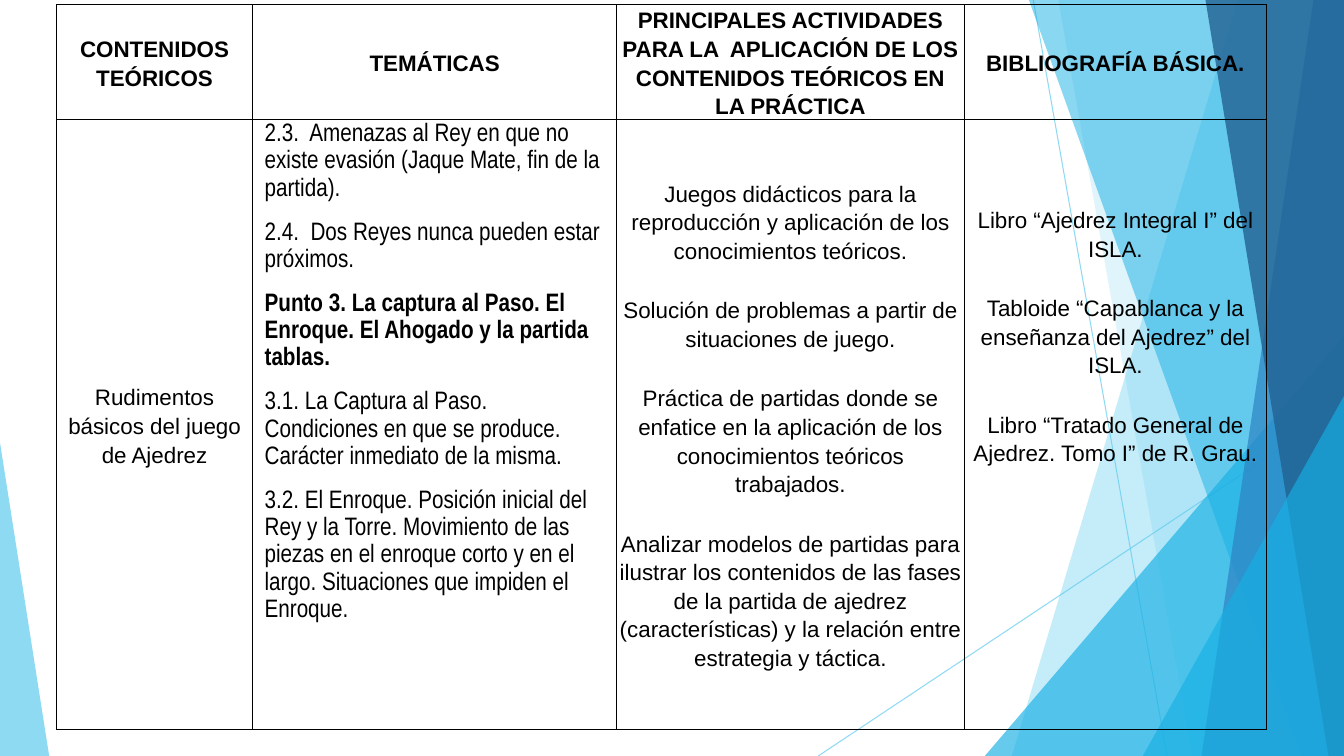
from lxml.etree import SubElement
from pptx import Presentation
from pptx.dml.color import RGBColor
from pptx.enum.shapes import MSO_CONNECTOR, MSO_SHAPE
from pptx.enum.text import MSO_ANCHOR, PP_ALIGN
from pptx.oxml import parse_xml
from pptx.oxml.ns import nsdecls, qn
from pptx.util import Cm, Pt


def paint(fill, color, opacity=100):
    fill.solid()
    fill.fore_color.rgb = RGBColor.from_string(color)
    if opacity < 100:
        srgb = next(fill._xPr.iter(qn("a:srgbClr")))
        SubElement(srgb, qn("a:alpha")).set("val", str(opacity * 1000))


def write(paragraph, text, font="Arial", size=16, bold=False,
          align=PP_ALIGN.CENTER, before=12, after=10, indent=0):
    paragraph.alignment = align
    paragraph.line_spacing = 1.15
    paragraph.space_before, paragraph.space_after = Pt(before), Pt(after)
    paragraph._p.get_or_add_pPr().set("marL", str(Cm(indent)))
    run = paragraph.add_run()
    run.text = text
    run.font.name, run.font.size, run.font.bold = font, Pt(size), bold
    paint(run.font.fill, "000000")


WIDTH, HEIGHT = 33.87, 19.05
presentation = Presentation()
presentation.slide_width, presentation.slide_height = Cm(WIDTH), Cm(HEIGHT)
slide = presentation.slides.add_slide(presentation.slide_layouts[6])
shapes = slide.shapes

for x1, y1, x2, y2 in [(26.04, 0, 29.41, HEIGHT), (WIDTH, 10.24, 20.62, HEIGHT)]:
    ray = shapes.add_connector(MSO_CONNECTOR.STRAIGHT, Cm(x1), Cm(y1), Cm(x2), Cm(y2))
    ray.line.width = Pt(0.75)
    paint(ray.line.fill, "5FCBEF", 70)
    SubElement(ray._element.spPr, qn("a:effectLst"))

facets = [
    ("panel", (31.19, 25.5), "5FCBEF", 36),
    ("panel", (26.67, 30.05), "5FCBEF", 20),
    ("triangle", (24.82, 8.46, 9.05, 1), "17B0E4", 66),
    ("panel", (25.93, 32.79), "17B0E4", 50),
    ("panel", (33.1, 30.28), "2E83C3", 70),
    ("panel", (30.38, 33.48), "226292", 80),
    ("triangle", (28.8, 9.98, 5.07, 1), "17B0E4", 66),
    ("triangle", (0, 11.15, 1.24, 0), "5FCBEF", 70),
]
for kind, geometry, color, opacity in facets:
    if kind == "panel":
        top_x, bottom_x = geometry
        outline = shapes.build_freeform(Cm(top_x), 0)
        corners = [(WIDTH, 0), (WIDTH, HEIGHT), (bottom_x, HEIGHT)]
        outline.add_line_segments([(Cm(x), Cm(y)) for x, y in corners], close=True)
        facet = outline.convert_to_shape()
    else:
        left, top, width, apex = geometry
        facet = shapes.add_shape(MSO_SHAPE.ISOSCELES_TRIANGLE, Cm(left), Cm(top),
                                 Cm(width), Cm(HEIGHT - top))
        facet.adjustments[0] = apex
    paint(facet.fill, color, opacity)
    facet.line.fill.background()
    facet.shadow.inherit = False

headings = [
    "CONTENIDOS TEÓRICOS",
    "TEMÁTICAS",
    "PRINCIPALES ACTIVIDADES PARA LA  APLICACIÓN DE LOS CONTENIDOS TEÓRICOS EN LA PRÁCTICA",
    "BIBLIOGRAFÍA BÁSICA.",
]
contents = ["Rudimentos básicos del juego de Ajedrez"]
topics = [
    "2.3.  Amenazas al Rey en que no existe evasión (Jaque Mate, fin de la partida).",
    "2.4.  Dos Reyes nunca pueden estar próximos.",
    "Punto 3. La captura al Paso. El Enroque. El Ahogado y la partida tablas.",
    "3.1. La Captura al Paso. Condiciones en que se produce. Carácter inmediato de la misma.",
    "3.2. El Enroque. Posición inicial del Rey y la Torre. Movimiento de las piezas en el "
    "enroque corto y en el largo. Situaciones que impiden el Enroque.",
]
activities = [
    "Juegos didácticos para la reproducción y aplicación de los conocimientos teóricos.",
    "Solución de problemas a partir de situaciones de juego.",
    "Práctica de partidas donde se enfatice en la aplicación de los conocimientos "
    "teóricos trabajados.",
    "Analizar modelos de partidas para ilustrar los contenidos de las fases de la partida de "
    "ajedrez (características) y la relación entre estrategia y táctica.",
]
bibliography = [
    "Libro “Ajedrez Integral I” del ISLA.",
    "Tabloide “Capablanca y la enseñanza del Ajedrez” del ISLA.",
    "Libro “Tratado General de Ajedrez. Tomo I” de R. Grau.",
]
rows = [[[heading] for heading in headings], [contents, topics, activities, bibliography]]
column_widths = [4.95, 9.17, 8.76, 7.62]
row_heights = [2.9, 15.37]

program = shapes.add_table(len(rows), len(headings), Cm(1.42), Cm(0.12),
                           Cm(sum(column_widths)), Cm(sum(row_heights))).table
program.first_row = program.horz_banding = False
for column, width in zip(program.columns, column_widths):
    column.width = Cm(width)
for row, height in zip(program.rows, row_heights):
    row.height = Cm(height)

for row_index, row in enumerate(rows):
    for column_index, texts in enumerate(row):
        cell = program.cell(row_index, column_index)
        is_topics = texts is topics
        cell.vertical_anchor = MSO_ANCHOR.TOP if is_topics else MSO_ANCHOR.MIDDLE
        cell.margin_left = cell.margin_right = Cm(0.25 if is_topics else 0.05)
        cell.margin_top = 0
        cell.margin_bottom = Cm(4.5 if texts is bibliography else 0)
        cell.fill.background()
        for position, side in enumerate(["lnL", "lnR", "lnT", "lnB"]):
            cell._tc.get_or_add_tcPr().insert(position, parse_xml(
                f'<a:{side} {nsdecls("a")} w="{Pt(1)}"><a:solidFill>'
                f'<a:srgbClr val="000000"/></a:solidFill></a:{side}>'))
        for index, text in enumerate(texts):
            frame = cell.text_frame
            paragraph = frame.add_paragraph() if index else frame.paragraphs[0]
            if is_topics:
                write(paragraph, text, font="Arial Narrow", size=18, align=PP_ALIGN.LEFT,
                      before=6, after=6, indent=0.05, bold=text.startswith("Punto"))
            else:
                write(paragraph, text, bold=row_index == 0)

presentation.save("out.pptx")
